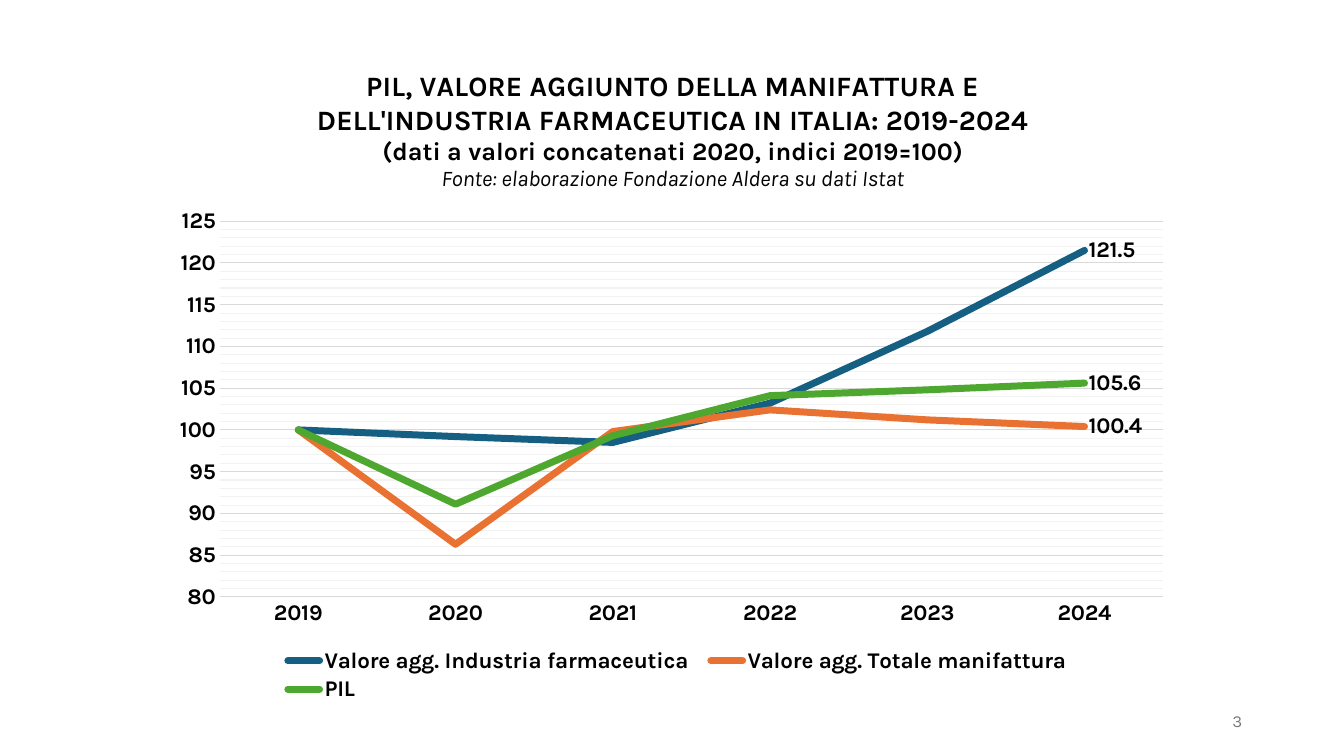
from copy import deepcopy

from lxml import etree
from pptx import Presentation
from pptx.chart.data import CategoryChartData
from pptx.dml.color import RGBColor
from pptx.enum.chart import XL_CHART_TYPE, XL_LABEL_POSITION, XL_LEGEND_POSITION, XL_TICK_MARK
from pptx.enum.text import MSO_ANCHOR, PP_ALIGN
from pptx.oxml.ns import qn
from pptx.util import Inches, Pt

LINE = XL_CHART_TYPE.LINE
LABEL_RIGHT = XL_LABEL_POSITION.RIGHT
LEGEND_BOTTOM = XL_LEGEND_POSITION.BOTTOM
NO_TICK = XL_TICK_MARK.NONE
MIDDLE = MSO_ANCHOR.MIDDLE
CENTER, RIGHT = PP_ALIGN.CENTER, PP_ALIGN.RIGHT

YEARS = ["2019", "2020", "2021", "2022", "2023", "2024"]
SERIES = [
    ("Valore agg. Industria farmaceutica", "156082", [100, 99.2, 98.5, 103.2, 111.8, 121.5]),
    ("Valore agg. Totale manifattura", "E97132", [100, 86.3, 99.8, 102.4, 101.2, 100.4]),
    ("PIL", "4EA72E", [100, 91.1, 99.3, 104.1, 104.8, 105.6]),
]
TITLE = [
    ("PIL, VALORE AGGIUNTO DELLA MANIFATTURA E DELL'INDUSTRIA FARMACEUTICA IN ITALIA: 2019-2024",
     dict(size=20, bold=True)),
    ("(dati a valori concatenati 2020, indici 2019=100)", dict(size=18, bold=True)),
    ("Fonte: elaborazione Fondazione Aldera su dati Istat", dict(size=16, italic=True)),
]


def style_font(font, size=16, color="000000", bold=False, italic=False):
    font.name = "Karla"
    font.size = Pt(size)
    font.bold = bold
    font.italic = italic
    font.color.rgb = RGBColor.from_string(color)


def write(para, text, align=CENTER, **style):
    para.alignment = align
    span = para.add_run()
    span.text = text
    style_font(span.font, **style)


deck = Presentation()
deck.slide_width, deck.slide_height = Inches(13.33), Inches(7.5)
page = deck.slides.add_slide(deck.slide_layouts[6])

# Line chart
data = CategoryChartData(number_format="0.0")
data.categories = YEARS
for name, color, values in SERIES:
    data.add_series(name, values)
chart = page.shapes.add_chart(
    LINE, Inches(1.59), Inches(0.45), Inches(10.15), Inches(6.61), data).chart
style_font(chart.font, size=10)

# Chart title
frame = chart.chart_title.text_frame
for index, (text, style) in enumerate(TITLE):
    para = frame.add_paragraph() if index else frame.paragraphs[0]
    write(para, text, **style)

# Axes and gridlines
years_axis, index_axis = chart.category_axis, chart.value_axis
for axis in (years_axis, index_axis):
    axis.major_tick_mark = axis.minor_tick_mark = NO_TICK
    style_font(axis.tick_labels.font, bold=True)
index_axis.minimum_scale, index_axis.maximum_scale = 80, 125
index_axis.major_unit, index_axis.minor_unit = 5, 1
index_axis.has_major_gridlines = index_axis.has_minor_gridlines = True
index_axis.tick_labels.number_format = "#,##0"
index_axis.tick_labels.number_format_is_linked = False
index_axis.format.line.fill.background()
for part in (years_axis, index_axis.major_gridlines):
    part.format.line.color.rgb = RGBColor.from_string("D9D9D9")
    part.format.line.width = Pt(0.75)

# Minor gridlines take the major style in a lighter grey
axis_xml = index_axis._element
minor_style = deepcopy(axis_xml.find(qn("c:majorGridlines")).find(qn("c:spPr")))
next(minor_style.iter(qn("a:srgbClr"))).set("val", "F2F2F2")
axis_xml.find(qn("c:minorGridlines")).append(minor_style)

# Series lines, with a value at the last year
chart.plots[0].vary_by_categories = False
for series, (name, color, values) in zip(chart.plots[0].series, SERIES):
    series.smooth = False
    series.format.line.color.rgb = RGBColor.from_string(color)
    series.format.line.width = Pt(5)
    line_xml = next(series._element.iter(qn("a:ln")))
    line_xml.set("cap", "rnd")
    etree.SubElement(line_xml, qn("a:round"))
    label = series.points[len(YEARS) - 1].data_label
    style_font(label.font, bold=True)
    label.position = LABEL_RIGHT

# Legend
chart.has_legend = True
chart.legend.position = LEGEND_BOTTOM
chart.legend.include_in_layout = False
style_font(chart.legend.font, bold=True)

# Places of the title, plot and legend as shares of the chart
PLACES = [
    (chart.chart_title._element, dict(x=0.15, y=0.03)),
    (chart._chartSpace.chart.plotArea, dict(x=0.058, y=0.264, w=0.922, h=0.564)),
    (chart.legend._element, dict(x=0.11, y=0.9, w=0.79, h=0.09)),
]
for element, shares in PLACES:
    layout = element.find(qn("c:layout"))
    if layout is None:
        layout = etree.Element(qn("c:layout"))
        before = element.find(qn("c:overlay"))
        if before is None:
            element.insert(0, layout)
        else:
            before.addprevious(layout)
    manual = etree.SubElement(layout, qn("c:manualLayout"))
    if element.tag == qn("c:plotArea"):
        etree.SubElement(manual, qn("c:layoutTarget")).set("val", "inner")
    for side in ("x", "y"):
        etree.SubElement(manual, qn(f"c:{side}Mode")).set("val", "edge")
    for key, share in shares.items():
        etree.SubElement(manual, qn(f"c:{key}")).set("val", str(share))

# Page number
box = page.shapes.add_textbox(Inches(9.42), Inches(6.95), Inches(3), Inches(0.4))
box.text_frame.word_wrap = True
box.text_frame.vertical_anchor = MIDDLE
write(box.text_frame.paragraphs[0], "3", align=RIGHT, size=12, color="797979")

deck.save("out.pptx")
